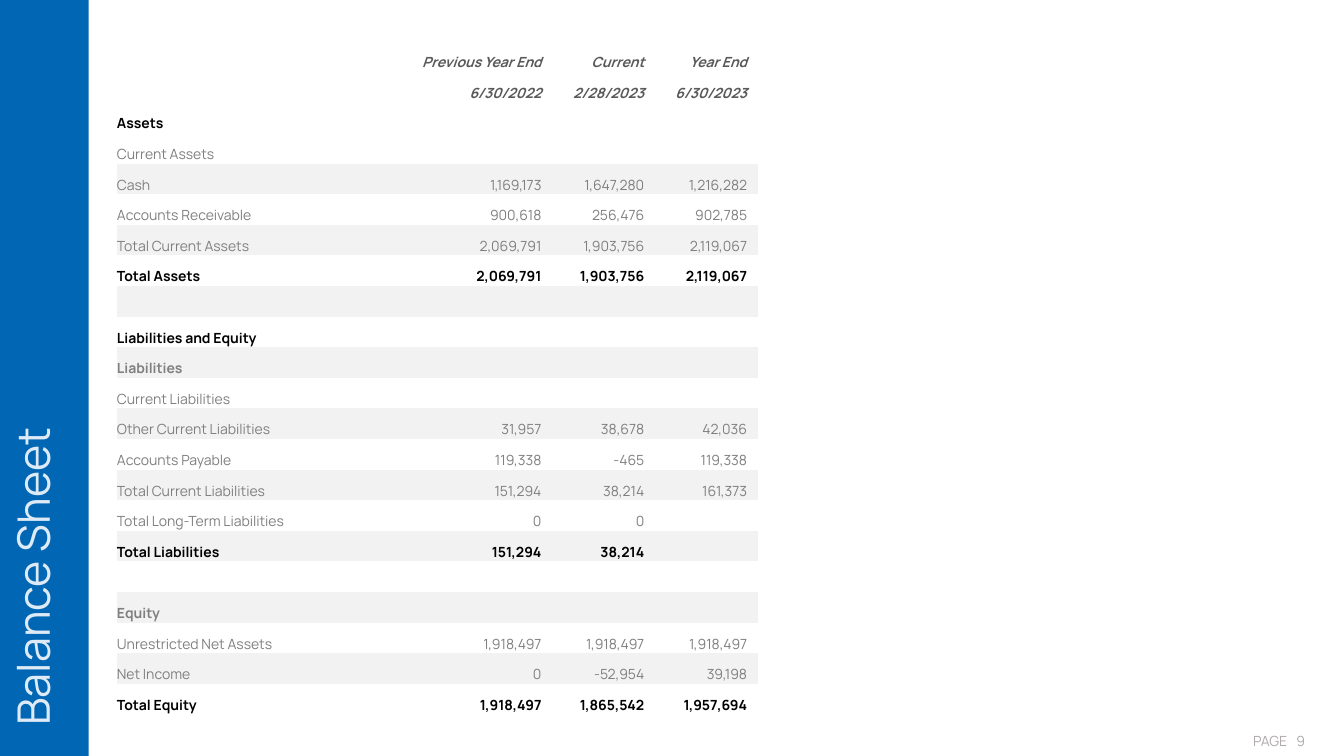
from pptx import Presentation
from pptx.dml.color import RGBColor as Rgb
from pptx.enum.text import MSO_ANCHOR as Anchor, MSO_AUTO_SIZE as Auto, PP_ALIGN as Align
from pptx.util import Inches, Pt

COLORS = {
    "bar": "0166B3", "title": "DEEBF7", "page": "AFABAB", "band": "F2F2F2",
    "head": "595959", "main": "000000", "part": "7F7F7F", "line": "7F7F7F",
}
FONT = "Manrope"
WIDE, HIGH = 13.33, 7.5
BAR = 0.88
COLS = [2.5, 1.82, 1.02, 1.02]
TALL = 6.68
FIRST = 4  # first banded row

# Each row: kind, label, then one value per date
ROWS = [
    ("head", "", "Previous Year End", "Current", "Year End"),
    ("head", "", "6/30/2022", "2/28/2023", "6/30/2023"),
    ("main", "Assets"),
    ("line", "Current Assets"),
    ("line", "Cash", "1,169,173", "1,647,280", "1,216,282"),
    ("line", "Accounts Receivable", "900,618", "256,476", "902,785"),
    ("line", "Total Current Assets", "2,069,791", "1,903,756", "2,119,067"),
    ("main", "Total Assets", "2,069,791", "1,903,756", "2,119,067"),
    ("line", ""),
    ("main", "Liabilities and Equity"),
    ("part", "Liabilities"),
    ("line", "Current Liabilities"),
    ("line", "Other Current Liabilities", "31,957", "38,678", "42,036"),
    ("line", "Accounts Payable", "119,338", "-465", "119,338"),
    ("line", "Total Current Liabilities", "151,294", "38,214", "161,373"),
    ("line", "Total Long-Term Liabilities", "0", "0"),
    ("main", "Total Liabilities", "151,294", "38,214"),
    ("line", ""),
    ("part", "Equity"),
    ("line", "Unrestricted Net Assets", "1,918,497", "1,918,497", "1,918,497"),
    ("line", "Net Income", "0", "-52,954", "39,198"),
    ("main", "Total Equity", "1,918,497", "1,865,542", "1,957,694"),
]


def write(par, text, kind, size=10, **looks):
    """Add a run in the style of its kind."""
    run = par.add_run()
    run.text = text
    font = run.font
    font.color.rgb = Rgb.from_string(COLORS[kind])
    for key, val in {"name": FONT, "size": Pt(size), **looks}.items():
        setattr(font, key, val)


def place(shape, left, top, width, height):
    box = {"left": left, "top": top, "width": width, "height": height}
    for key, val in box.items():
        setattr(shape, key, Inches(val))


deck = Presentation()
deck.slide_width, deck.slide_height = Inches(WIDE), Inches(HIGH)
slide = deck.slides.add_slide(deck.slide_layouts[5])

# Title bar: a wide box turned about its centre to stand at the left edge
title = slide.shapes.title
place(title, (BAR - HIGH) / 2, (HIGH - BAR) / 2, HIGH, BAR)
title.rotation = 270
title.fill.solid()
title.fill.fore_color.rgb = Rgb.from_string(COLORS["bar"])
frame = title.text_frame
form = {
    "auto_size": Auto.NONE, "word_wrap": True, "vertical_anchor": Anchor.TOP,
    "margin_left": Inches(0.3), "margin_right": 0,
    "margin_top": Inches(0.05), "margin_bottom": 0,
}
for key, val in form.items():
    setattr(frame, key, val)
frame.paragraphs[0].alignment = Align.LEFT
write(frame.paragraphs[0], "Balance Sheet", "title", 32)

# Page mark
for text, left, width, wrap in [("PAGE", 12.33, 0.57, False), ("9", 12.76, 0.43, True)]:
    note = slide.shapes.add_textbox(0, 0, 0, 0)
    place(note, left, 7.22, width, 0.27)
    note.text_frame.word_wrap = wrap
    write(note.text_frame.paragraphs[0], text, "page")

# Balance sheet
table = slide.shapes.add_table(
    len(ROWS), len(COLS), Inches(1.16), Inches(0.41), Inches(sum(COLS)), Inches(TALL)
).table
table.first_row = table.horz_banding = False
for col, width in zip(table.columns, COLS):
    col.width = Inches(width)

for r, (kind, *texts) in enumerate(ROWS):
    table.rows[r].height = Inches(TALL / len(ROWS))
    texts += [""] * (len(COLS) - len(texts))
    for c, text in enumerate(texts):
        cell = table.cell(r, c)
        form = {
            "vertical_anchor": Anchor.BOTTOM, "margin_bottom": 0,
            "margin_left": 0, "margin_top": Inches(0.01),
            "margin_right": Inches(0.11 if c else 0.01),
        }
        for key, val in form.items():
            setattr(cell, key, val)
        if r >= FIRST and r % 2 == 0:
            cell.fill.solid()
            cell.fill.fore_color.rgb = Rgb.from_string(COLORS["band"])
        else:
            cell.fill.background()
        par = cell.text_frame.paragraphs[0]
        par.alignment = Align.RIGHT if c else Align.LEFT
        if text:
            write(par, text, kind, bold=kind != "line", italic=kind == "head")
        else:
            par._p.get_or_add_endParaRPr().set("sz", "1000")

# Plain table style, without grid lines
style = table._tbl.tblPr.find("{*}tableStyleId")
style.text = "{2D5ABB26-0587-4C30-8999-92F81FD0307C}"

deck.save("out.pptx")
